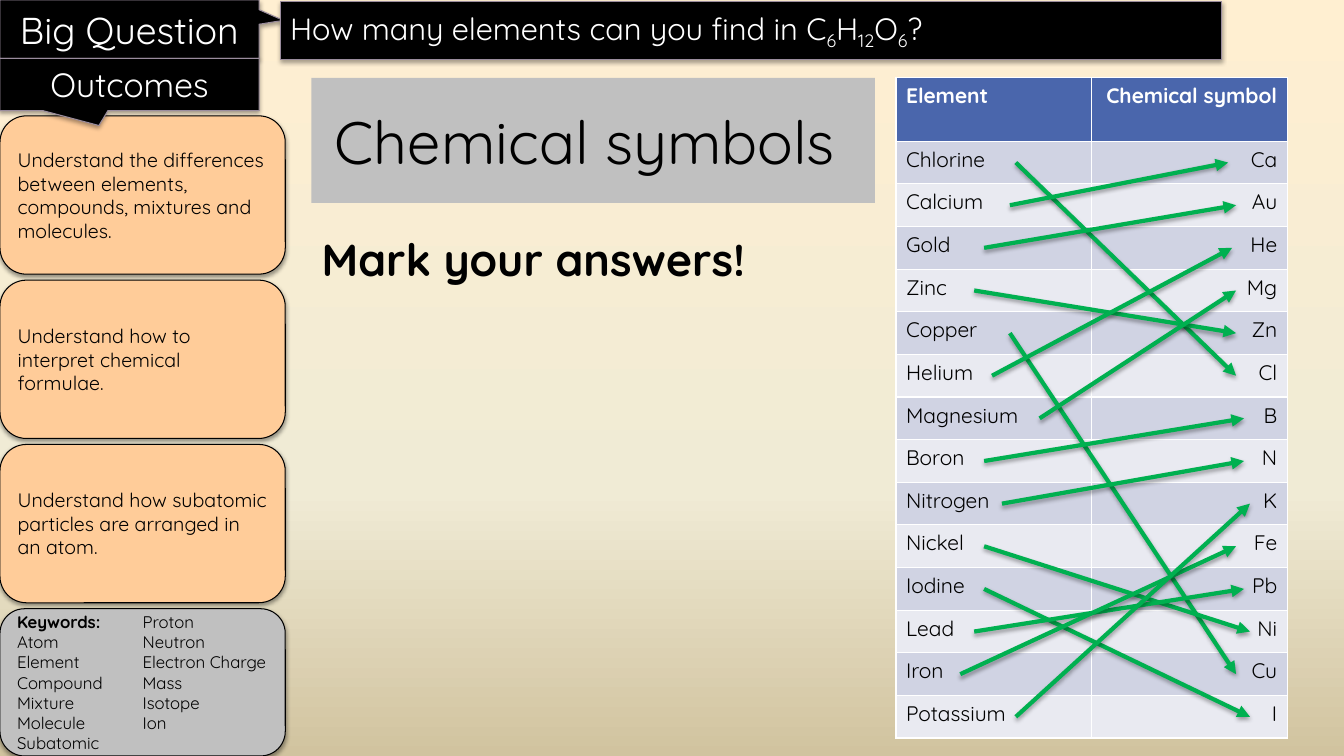
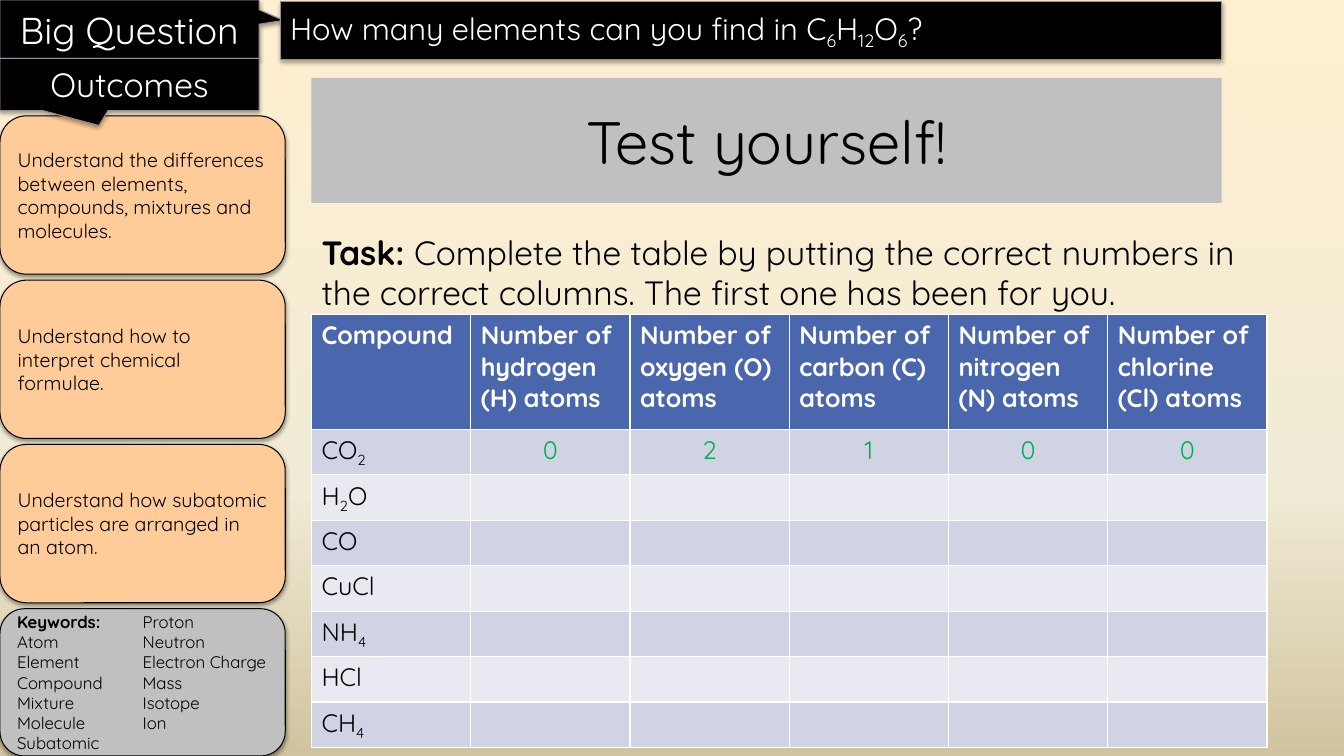
from itertools import groupby

from lxml import etree
from pptx import Presentation
from pptx import util as u
from pptx.dml.color import RGBColor
from pptx.enum import shapes, text
from pptx.oxml.ns import qn

LEFT, CENTER, RIGHT = text.PP_ALIGN.LEFT, text.PP_ALIGN.CENTER, text.PP_ALIGN.RIGHT
RECT = shapes.MSO_SHAPE.RECTANGLE
ROUNDED = shapes.MSO_SHAPE.ROUNDED_RECTANGLE
CALLOUT = shapes.MSO_SHAPE.RECTANGULAR_CALLOUT

BLACK, WHITE, GREEN = "000000", "FFFFFF", "00B050"
GREY, PEACH, MAUVE = "C0C0C0", "FFCC99", "9A8C9D"
HEADER, BANDS = "4A66AC", ("D0D3E3", "E9EAF1")
BACKDROP = [(0, "FFEFD1"), (65, "F0EBD5"), (100, "D1C39F")]

QUESTION = "How many elements can you find in C6H12O6?"
OUTCOMES = [
    "Understand the differences between elements, compounds, mixtures and molecules.",
    "Understand how to interpret chemical formulae.",
    "Understand how subatomic particles are arranged in an atom.",
]
KEYWORDS = [
    "**Keywords:**", "Atom", "Element", "Compound", "Mixture", "Molecule",
    "Subatomic Proton", "Neutron", "Electron Charge", "Mass", "Isotope", "Ion",
]

# Element, its symbol, and where its arrow starts (cm)
ELEMENTS = [
    ("Chlorine", "Cl", 25.6), ("Calcium", "Ca", 25.45), ("Gold", "Au", 24.8),
    ("Zinc", "Zn", 24.55), ("Copper", "Cu", 25.45), ("Helium", "He", 25),
    ("Magnesium", "Mg", 26.2), ("Boron", "B", 24.8), ("Nitrogen", "N", 25.25),
    ("Nickel", "Ni", 24.8), ("Iodine", "I", 24.8), ("Lead", "Pb", 24.55),
    ("Iron", "Fe", 24.2), ("Potassium", "K", 25.6),
]
# Symbols in table order, and where the arrow to each one ends (cm)
SYMBOLS = {
    "Ca": 30.95, "Au": 31.15, "He": 31.05, "Mg": 31.15, "Zn": 31.15, "Cl": 31.15,
    "B": 31.35, "N": 31.35, "K": 31.5, "Fe": 31.15, "Pb": 31.35, "Ni": 31.5,
    "Cu": 31.15, "I": 31.5,
}
ATOMS = ["hydrogen (H)", "oxygen (O)", "carbon (C)", "nitrogen (N)", "chlorine (Cl)"]
COMPOUNDS = ["CO2", "H2O", "CO", "CuCl", "NH4", "HCl", "CH4"]


def rgb(value):
    return RGBColor.from_string(value)


def cm(*lengths):
    return [u.Cm(length) for length in lengths]


def child(parent, tag, **attributes):
    return etree.SubElement(parent, qn(tag), {k: str(v) for k, v in attributes.items()})


class Lesson:
    """Lesson style together with the slide being filled."""

    font = "Quicksand"

    def __init__(self):
        self.deck = Presentation()
        self.deck.slide_width, self.deck.slide_height = cm(33.87, 19.05)
        self.slide = None
        self.paint_backdrop()

    def paint_backdrop(self):
        master = self.deck.slide_master
        fill = master.background.fill
        fill.gradient()
        fill.gradient_angle = 270
        stops = master.element.find(".//" + qn("a:gsLst"))
        for stop in list(stops):
            stops.remove(stop)
        for position, color in BACKDROP:
            stop = child(stops, "a:gs", pos=position * 1000)
            child(stop, "a:srgbClr", val=color)

    def add_slide(self, title, title_width, body, body_width, body_size):
        self.slide = self.deck.slides.add_slide(self.deck.slide_layouts[1])
        heading, content = self.slide.placeholders
        self.placeholder(heading, (7.85, 1.96, title_width, 3.15), title, CENTER, 42.7)
        heading.fill.solid()
        heading.fill.fore_color.rgb = rgb(GREY)
        self.placeholder(content, (7.85, 5.71, body_width, 12.52), body, LEFT, body_size)
        self.sidebar()

    def placeholder(self, shape, place, words, align, size):
        shape.left, shape.top, shape.width, shape.height = cm(*place)
        shape.text_frame.auto_size = text.MSO_AUTO_SIZE.NONE
        self.set_text(shape.text_frame, [words], align, size)
        para = shape.text_frame.paragraphs[0]
        para.space_before = u.Pt(0)
        properties = para._p.get_or_add_pPr()
        properties.set("marL", "0")
        properties.set("indent", "0")
        child(properties, "a:buNone")

    def sidebar(self):
        self.panel(CALLOUT, (0, 0, 6.53, 1.47), ["Big Question"], 26.7, CENTER,
                   tip=(0.593, -0.15))
        self.panel(RECT, (7.06, 0.03, 23.72, 1.47), [QUESTION], 22)
        for index, outcome in enumerate(OUTCOMES):
            self.card(2.92 + 4.14 * index, 3.99, PEACH, [outcome], 14)
        keywords = self.card(15.34, 3.71, GREY, KEYWORDS, 12)
        keywords.text_frame._txBody.bodyPr.set("numCol", "2")
        self.panel(CALLOUT, (0, 1.47, 6.53, 1.32), ["Outcomes"], 24, CENTER,
                   tip=(-0.118, 0.783))

    def card(self, top, height, fill, lines, size):
        return self.panel(ROUNDED, (0, top, 7.19, height), lines, size, fill=fill,
                          outline=BLACK, color=BLACK, shade=(38, 1.6))

    def panel(self, kind, place, lines, size, align=LEFT, fill=BLACK, outline=MAUVE,
              color=WHITE, shade=(35, 1.8), tip=()):
        shape = self.slide.shapes.add_shape(kind, *cm(*place))
        for index, value in enumerate(tip):
            shape.adjustments[index] = value
        shape.fill.solid()
        shape.fill.fore_color.rgb = rgb(fill)
        shape.line.color.rgb = rgb(outline)
        shape.line.width = u.Pt(0.75)
        self.shadow(shape, *shade)
        frame = shape.text_frame
        frame.word_wrap = True
        frame.vertical_anchor = text.MSO_ANCHOR.MIDDLE
        self.set_text(frame, lines, align, size, color)
        return shape

    def shadow(self, shape, opacity, distance):
        effects = child(shape.element.spPr, "a:effectLst")
        outer = child(effects, "a:outerShdw", blurRad=u.Pt(3.1), dist=u.Pt(distance),
                      dir=90 * 60000, rotWithShape=0)
        child(child(outer, "a:srgbClr", val=BLACK), "a:alpha", val=opacity * 1000)

    def set_text(self, frame, lines, align, size, color=BLACK, bold=False):
        """Fill a frame; ** toggles bold, digits after other characters are subscripts."""
        for index, line in enumerate(lines):
            para = frame.paragraphs[0] if index == 0 else frame.add_paragraph()
            para.alignment = align
            for part, words in enumerate(line.split("**")):
                for position, (digits, group) in enumerate(groupby(words, str.isdigit)):
                    span = para.add_run()
                    span.text = "".join(group)
                    style = {"name": self.font, "size": u.Pt(size),
                             "bold": bold or part % 2 == 1}
                    for name, value in style.items():
                        setattr(span.font, name, value)
                    span.font.color.rgb = rgb(color)
                    if digits and position:
                        span._r.get_or_add_rPr().set("baseline", "-25000")

    def table(self, place, header_height, rows, size, aligns, header_aligns, colors):
        """Draw a banded table; aligns and colors hold one value per column."""
        frame = self.slide.shapes.add_table(len(rows), len(rows[0]), *cm(*place))
        grid = frame.table
        row_height = (place[3] - header_height) / (len(rows) - 1)
        for index, row in enumerate(rows):
            header = index == 0
            grid.rows[index].height = u.Cm(header_height if header else row_height)
            for column, words in enumerate(row):
                cell = grid.cell(index, column)
                cell.fill.solid()
                cell.fill.fore_color.rgb = rgb(HEADER if header else BANDS[(index - 1) % 2])
                self.set_text(cell.text_frame, [words],
                              (header_aligns if header else aligns)[column], size,
                              WHITE if header else colors[column], header)

    def arrow(self, start, end):
        line = self.slide.shapes.add_connector(
            shapes.MSO_CONNECTOR.STRAIGHT, *cm(*start, *end))
        line.line.color.rgb = rgb(GREEN)
        line.line.width = u.Pt(3)
        child(line.element.spPr.find(qn("a:ln")), "a:tailEnd", type="triangle")
        self.shadow(line, 35, 1.8)


def add_symbols_slide(lesson):
    lesson.add_slide("Chemical symbols ", 14.2, "**Mark your answers!**", 14.2, 32)
    left, top, width, height, header = 22.58, 1.96, 9.86, 16.64, 1.6
    rows = [("Element", "Chemical symbol")]
    rows += [(element[0], symbol) for element, symbol in zip(ELEMENTS, SYMBOLS)]
    aligns = (LEFT, RIGHT)
    lesson.table((left, top, width, height), header, rows, 15, aligns, aligns,
                 (BLACK, BLACK))

    row_height = (height - header) / len(ELEMENTS)
    middles = [top + header + row_height * (index + 0.5) for index in range(len(ELEMENTS))]
    targets = {symbol: (x, y) for (symbol, x), y in zip(SYMBOLS.items(), middles)}
    for (_, symbol, start), y in zip(ELEMENTS, middles):
        lesson.arrow((start, y), targets[symbol])


def add_test_slide(lesson):
    task = ("**Task: **Complete the table by putting the correct numbers in the correct "
            "columns. The first one has been for you.")
    lesson.add_slide("Test yourself!", 22.94, task, 24.08, 24)
    count = len(ATOMS)
    rows = [["Compound"] + [f"Number of {atom} atoms" for atom in ATOMS]]
    rows += [[compound] + [""] * count for compound in COMPOUNDS]
    rows[1][1:] = "02100"
    lesson.table((7.85, 7.92, 24.08, 10.92), 2.9, rows, 18, [LEFT] + [CENTER] * count,
                 [LEFT] * (count + 1), [BLACK] + [GREEN] * count)


def main():
    lesson = Lesson()
    add_symbols_slide(lesson)
    add_test_slide(lesson)
    lesson.deck.save("out.pptx")


if __name__ == "__main__":
    main()
